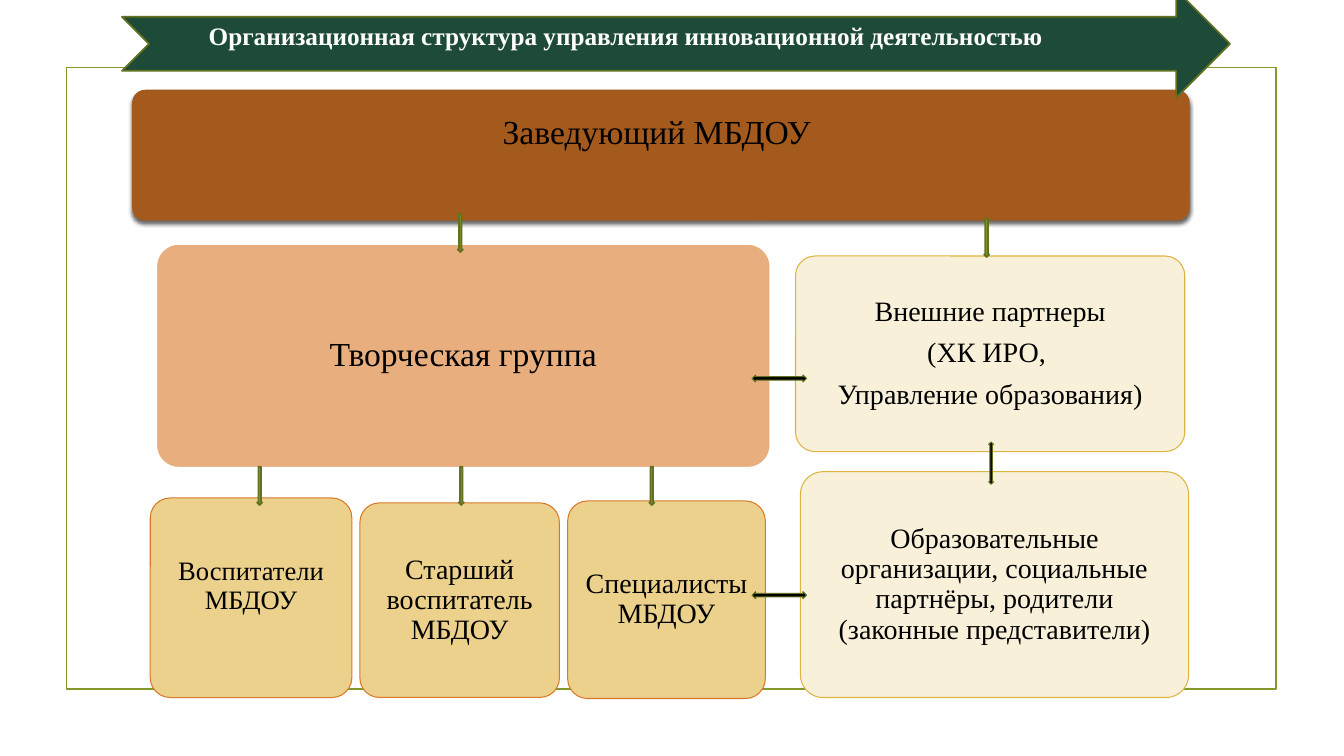
from dataclasses import dataclass

import pptx
import pptx.dml.color
import pptx.enum.shapes
import pptx.enum.text
import pptx.oxml
import pptx.oxml.ns
import pptx.util

RGBColor = pptx.dml.color.RGBColor
Preset = pptx.enum.shapes.MSO_SHAPE
Align = pptx.enum.text.PP_ALIGN
Anchor = pptx.enum.text.MSO_ANCHOR

WHITE = RGBColor(0xFF, 0xFF, 0xFF)
BLACK = RGBColor(0x00, 0x00, 0x00)
OLIVE = RGBColor(0x83, 0x99, 0x2A)
DARK_OLIVE = RGBColor(0x61, 0x71, 0x1F)
GREEN = RGBColor(0x1E, 0x4B, 0x38)
BROWN = RGBColor(0xA4, 0x5A, 0x1D)
PEACH = RGBColor(0xE8, 0xAE, 0x7E)
SAND = RGBColor(0xEB, 0xD1, 0x8C)
ORANGE = RGBColor(0xD9, 0x78, 0x28)
CREAM = RGBColor(0xF8, 0xF0, 0xD9)
GOLD = RGBColor(0xDE, 0xB3, 0x40)

FONT = "Times New Roman"
SLIDE_WIDTH = pptx.util.Inches(13.33)
SLIDE_HEIGHT = pptx.util.Inches(7.5)


@dataclass(frozen=True)
class Area:
    """A place on the slide, in percent of its width and height."""
    left: float
    top: float
    width: float
    height: float

    def lengths(self) -> tuple[int, int, int, int]:
        return (int(SLIDE_WIDTH * self.left / 100), int(SLIDE_HEIGHT * self.top / 100),
                int(SLIDE_WIDTH * self.width / 100), int(SLIDE_HEIGHT * self.height / 100))


@dataclass(frozen=True)
class Look:
    fill: RGBColor | None
    line: RGBColor | None
    line_width: float = 1.25


@dataclass(frozen=True)
class Card:
    area: Area
    look: Look
    lines: tuple[str, ...]
    size: int = 20
    inset: float = 0.08
    lift: float = 0  # inches by which the text sits above the middle
    shadow: bool = False


@dataclass(frozen=True)
class Arrow:
    preset: Preset
    area: Area
    look: Look
    rotation: int = 0


STAFF = Look(SAND, ORANGE, 0.75)
EXTERNAL = Look(CREAM, GOLD, 0.75)
DOWN = Look(OLIVE, DARK_OLIVE)
BOTH_WAYS = Look(BLACK, DARK_OLIVE, 0.75)

TITLE = "Организационная структура управления инновационной деятельностью"
TITLE_AREA = Area(14.78, 2, 71.72, 5.33)
FRAME_AREA = Area(4.95, 8.93, 90.02, 82.27)
BANNER_AREA = Area(9.08, -1.33, 82.45, 14.27)

CARDS = (
    Card(Area(9.83, 11.87, 78.69, 17.33), Look(BROWN, None), ("Заведующий МБДОУ ",),
         size=24, inset=0.1, lift=0.21, shadow=True),
    Card(Area(11.63, 32.27, 45.69, 29.6), Look(PEACH, WHITE), ("Творческая группа",),
         size=24, inset=0.1),
    Card(Area(26.78, 66.53, 14.85, 25.73), STAFF, ("Старший воспитатель МБДОУ",)),
    Card(Area(42.24, 66.27, 14.7, 26.13), STAFF, ("Специалисты МБДОУ",)),
    Card(Area(59.19, 33.87, 28.96, 25.87), EXTERNAL,
         ("Внешние партнеры", "(ХК ИРО, ", "Управление образования)")),
    Card(Area(59.56, 62.4, 28.88, 29.87), EXTERNAL,
         ("Образовательные организации, социальные партнёры, родители "
          "(законные представители)",)),
    Card(Area(11.18, 65.87, 15, 26.4), STAFF, ("Воспитатели МБДОУ",), size=19, lift=0.11),
)

DOWN_STARTS = ((34.13, 61.73), (19.13, 61.73), (48.31, 61.73), (73.22, 28.93), (34.06, 28.27))
ARROWS = (
    *(Arrow(Preset.DOWN_ARROW, Area(left, top, 0.38, 5.07), DOWN) for left, top in DOWN_STARTS),
    *(Arrow(Preset.LEFT_RIGHT_ARROW, Area(55.96, top, 4.05, 0.93), BOTH_WAYS)
      for top in (49.6, 78.27)),
    Arrow(Preset.LEFT_RIGHT_ARROW, Area(72.17, 60.93, 3.15, 0.67), BOTH_WAYS, rotation=270),
)


def draw_shape(slide: pptx.slide.Slide, preset: Preset, area: Area, look: Look):
    shape = slide.shapes.add_shape(preset, *area.lengths())
    shape.shadow.inherit = False
    if look.fill is None:
        shape.fill.background()
    else:
        shape.fill.solid()
        shape.fill.fore_color.rgb = look.fill
    if look.line is None:
        shape.line.fill.background()
    else:
        shape.line.color.rgb = look.line
        shape.line.width = pptx.util.Pt(look.line_width)
    return shape


def add_shadow(shape) -> None:
    effects = shape.element.spPr.find(pptx.oxml.ns.qn("a:effectLst"))
    effects.append(pptx.oxml.parse_xml(
        f'<a:outerShdw {pptx.oxml.ns.nsdecls("a")} blurRad="38100" dist="25400" dir="5400000">'
        '<a:srgbClr val="000000"><a:alpha val="60000"/></a:srgbClr></a:outerShdw>'))


def add_text(paragraph, text: str, size: int, color: RGBColor, bold: bool = False) -> None:
    run = paragraph.add_run()
    run.text = text
    run.font.name = FONT
    run.font.size = pptx.util.Pt(size)
    run.font.color.rgb = color
    run.font.bold = bold


def draw_card(slide: pptx.slide.Slide, card: Card) -> None:
    shape = draw_shape(slide, Preset.ROUNDED_RECTANGLE, card.area, card.look)
    shape.adjustments[0] = 0.1
    if card.shadow:
        add_shadow(shape)
    frame = shape.text_frame
    frame.word_wrap = True
    frame.vertical_anchor = Anchor.MIDDLE
    frame.margin_left = frame.margin_right = frame.margin_top = pptx.util.Inches(card.inset)
    frame.margin_bottom = pptx.util.Inches(card.inset + 2 * card.lift)
    for index, line in enumerate(card.lines):
        paragraph = frame.add_paragraph() if index else frame.paragraphs[0]
        paragraph.alignment = Align.CENTER
        paragraph.line_spacing = 0.9
        paragraph.space_after = pptx.util.Pt(8)
        add_text(paragraph, line, card.size, BLACK)


def draw_title(slide: pptx.slide.Slide) -> None:
    draw_shape(slide, Preset.NOTCHED_RIGHT_ARROW, BANNER_AREA, Look(GREEN, DARK_OLIVE))
    title = slide.shapes.title
    title.left, title.top, title.width, title.height = TITLE_AREA.lengths()
    frame = title.text_frame
    frame.word_wrap = True
    frame.auto_size = pptx.enum.text.MSO_AUTO_SIZE.NONE
    frame.vertical_anchor = Anchor.TOP
    frame.paragraphs[0].alignment = Align.LEFT
    add_text(frame.paragraphs[0], TITLE, 18, WHITE, bold=True)
    # Bring the title in front of its banner
    title.element.getparent().append(title.element)


def main() -> None:
    presentation = pptx.Presentation()
    presentation.slide_width = SLIDE_WIDTH
    presentation.slide_height = SLIDE_HEIGHT
    slide = presentation.slides.add_slide(presentation.slide_layouts.get_by_name("Title Only"))

    # Border, then the boxes of the structure
    draw_shape(slide, Preset.RECTANGLE, FRAME_AREA, Look(None, OLIVE))
    for card in CARDS:
        draw_card(slide, card)

    # Banner with the title
    draw_title(slide)

    # Links between the boxes
    for arrow in ARROWS:
        shape = draw_shape(slide, arrow.preset, arrow.area, arrow.look)
        shape.rotation = arrow.rotation

    presentation.save("out.pptx")


if __name__ == "__main__":
    main()
